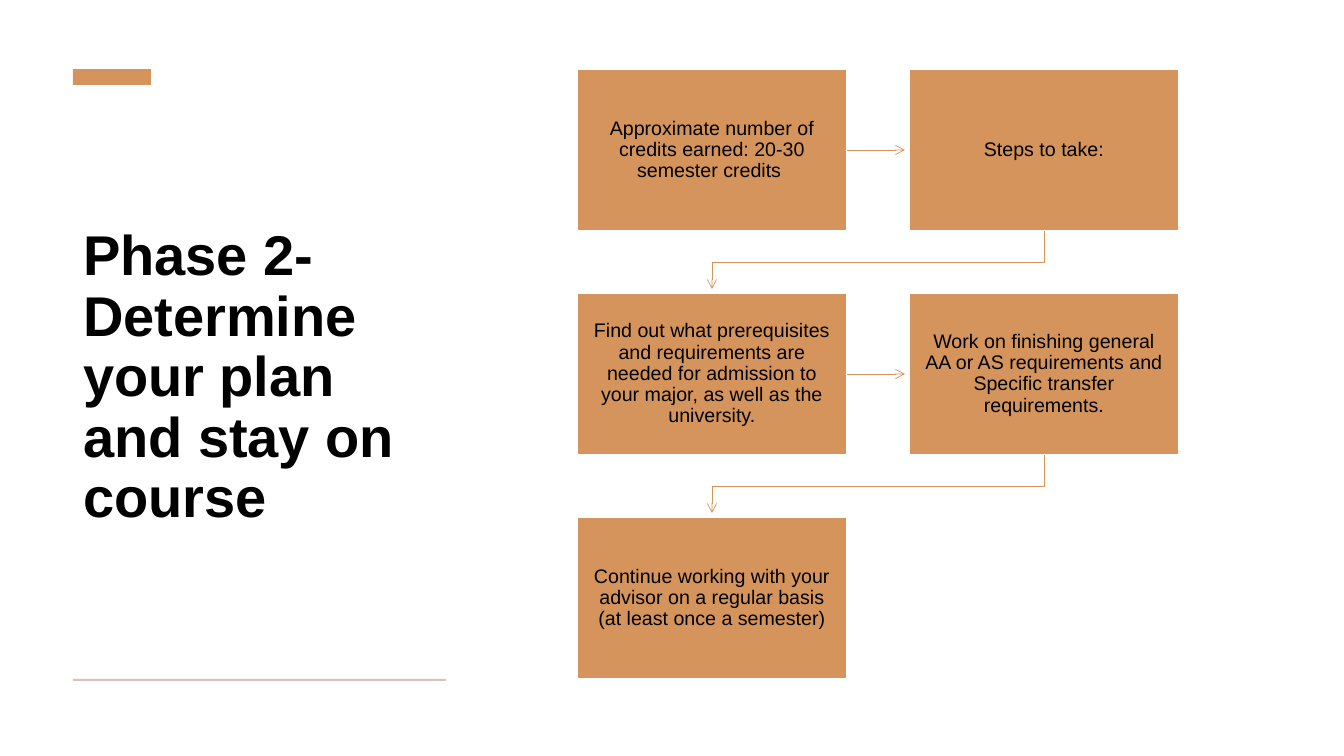
import pptx
import pptx.dml.color
import pptx.enum.shapes
import pptx.enum.text
import pptx.oxml
import pptx.oxml.ns
import pptx.util

SLIDE_W, SLIDE_H = 1344, 756
PX = 12192000 / SLIDE_W
FONT = "Arial"
ORANGE, ROSE, WHITE, BLACK = "D4945C", "DBC1BD", "FFFFFF", "000000"

TITLE = "Phase 2- Determine your plan and stay on course"
STEPS = [
    "Approximate number of credits earned: 20-30 semester credits ",
    "Steps to take:",
    "Find out what prerequisites and requirements are needed for admission to "
    "your major, as well as the university.",
    "Work on finishing general AA or AS requirements and Specific transfer requirements.",
    "Continue working with your advisor on a regular basis (at least once a semester)",
]


def px(length):
    return pptx.util.Emu(round(length * PX))


def paint(colour_format, colour):
    colour_format.rgb = pptx.dml.color.RGBColor.from_string(colour)


def add_block(slide, left, top, width, height, colour):
    block = slide.shapes.add_shape(
        pptx.enum.shapes.MSO_SHAPE.RECTANGLE, px(left), px(top), px(width), px(height))
    block.shadow.inherit = False
    block.fill.solid()
    paint(block.fill.fore_color, colour)
    block.line.fill.background()
    return block


def write(shape, text, size, align, bold=False):
    frame = shape.text_frame
    frame.word_wrap = True
    frame.auto_size = pptx.enum.text.MSO_AUTO_SIZE.NONE
    frame.vertical_anchor = pptx.enum.text.MSO_ANCHOR.MIDDLE
    paragraph = frame.paragraphs[0]
    paragraph.alignment = align
    paragraph.line_spacing = 0.9
    run = paragraph.add_run()
    run.text = text
    run.font.name = FONT
    run.font.size = pptx.util.Pt(size)
    run.font.bold = bold
    paint(run.font.color, BLACK)


def style_arrow(arrow):
    arrow.line.width = pptx.util.Pt(0.5)
    arrow.line.fill.solid()
    paint(arrow.line.fill.fore_color, ORANGE)
    outline = arrow.line._get_or_add_ln()
    pptx.oxml.ns.qn("a:tailEnd")
    outline.append(pptx.oxml.parse_xml(
        f'<a:tailEnd {pptx.oxml.ns.nsdecls("a")} type="arrow"/>'))


def add_title_panel(slide, left, top, width, height):
    # Accent bar above, title in the middle, thin rule below
    add_block(slide, left, top, 78, 16, ORANGE)
    title = slide.shapes.title
    title.left, title.top = px(left), px(top + 37)
    title.width, title.height = px(width), px(height - 67)
    write(title, TITLE, 40, pptx.enum.text.PP_ALIGN.LEFT, bold=True)
    add_block(slide, left, top + height - 2, width, 2, ROSE)


def add_step(slide, left, top, width, height, text):
    step = add_block(slide, left, top, width, height, ORANGE)
    paint_line = step.line
    paint_line.fill.solid()
    paint(paint_line.fill.fore_color, WHITE)
    paint_line.width = pptx.util.Pt(1)
    frame = step.text_frame
    frame.margin_left = frame.margin_right = px(13)
    frame.margin_top = frame.margin_bottom = px(14)
    write(step, text, 14, pptx.enum.text.PP_ALIGN.CENTER)
    return step


def add_across_arrow(slide, step, right, middle, gap):
    arrow = slide.shapes.add_connector(
        pptx.enum.shapes.MSO_CONNECTOR.STRAIGHT,
        px(right), px(middle), px(right + gap - 4), px(middle))
    arrow.begin_connect(step, 3)
    arrow._element.spPr.append(pptx.oxml.parse_xml(
        f'<a:effectLst {pptx.oxml.ns.nsdecls("a")}/>'))
    style_arrow(arrow)


def add_return_arrow(slide, start_x, end_x, top, gap):
    bend = top + gap // 2
    outline = slide.shapes.build_freeform(px(start_x), px(top))
    outline.add_line_segments(
        [(px(start_x), px(bend)), (px(end_x), px(bend)), (px(end_x), px(top + gap - 4))],
        close=False)
    arrow = outline.convert_to_shape()
    arrow.shadow.inherit = False
    arrow.fill.background()
    style_arrow(arrow)


def add_flow(slide, left, top, width, height):
    # Two columns, three rows, read in a zigzag
    gap = 62
    step_w, step_h = (width - gap) // 2, (height - 2 * gap) // 3
    for index, text in enumerate(STEPS):
        row, column = divmod(index, 2)
        x = left + column * (step_w + gap)
        y = top + row * (step_h + gap)
        step = add_step(slide, x, y, step_w, step_h, text)
        if index == len(STEPS) - 1:
            break
        if column == 0:
            add_across_arrow(slide, step, x + step_w, y + step_h / 2, gap)
        else:
            add_return_arrow(slide, x + step_w // 2, left + step_w // 2, y + step_h, gap)


def main():
    deck = pptx.Presentation()
    deck.slide_width, deck.slide_height = px(SLIDE_W), px(SLIDE_H)
    slide = deck.slides.add_slide(deck.slide_layouts.get_by_name("Title Only"))
    slide.background.fill.solid()
    paint(slide.background.fill.fore_color, WHITE)
    add_title_panel(slide, 73, 69, 373, 612)
    add_flow(slide, 577, 69, 602, 610)
    deck.save("out.pptx")


if __name__ == "__main__":
    main()
